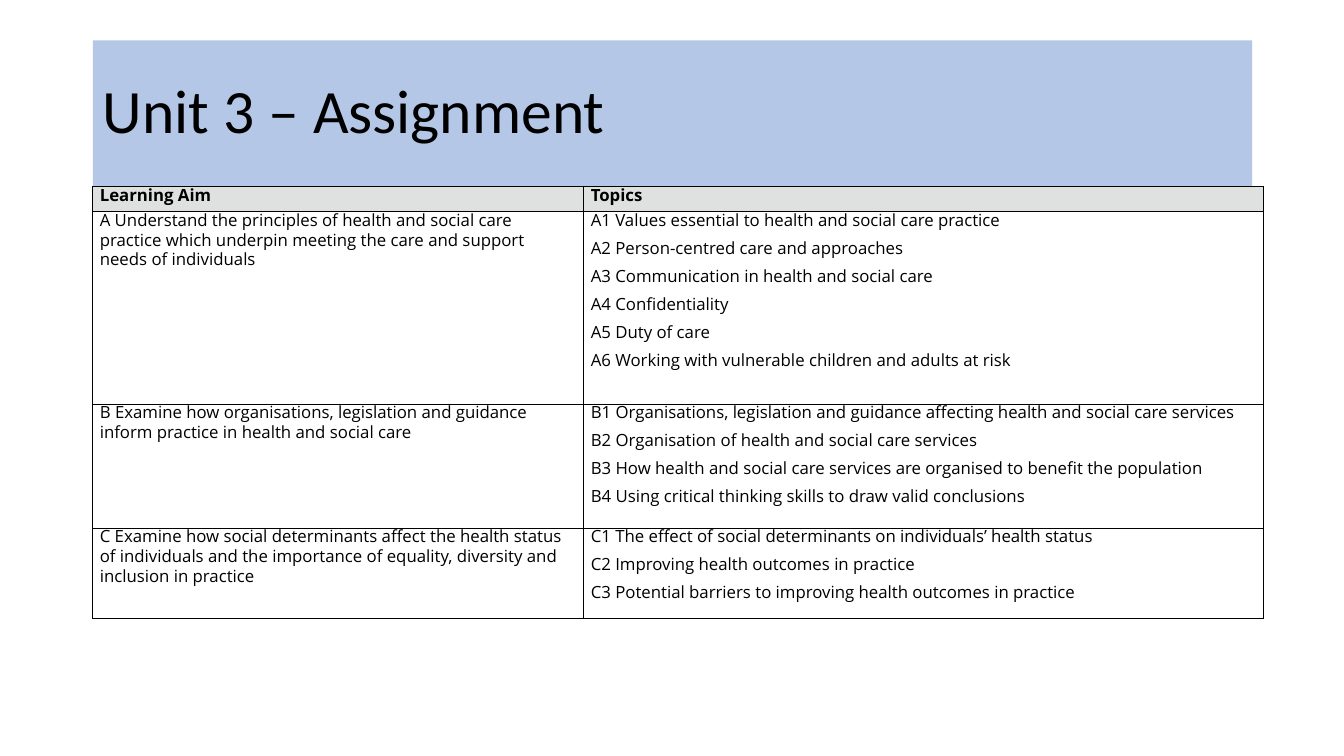
from lxml.etree import SubElement
from pptx import Presentation
from pptx.dml.color import RGBColor
from pptx.enum.text import MSO_ANCHOR, PP_ALIGN
from pptx.oxml.ns import qn
from pptx.util import Inches, Pt

HUES = {"ink": "000000", "band": "B4C7E7", "head": "DFE1E1", "page": "FFFFFF"}
COLS = [4.87, 6.74]
ROWS = [0.25, 1.91, 1.23, 0.9]
AIMS = [
    ("Learning Aim", ["Topics"]),
    ("A Understand the principles of health and social care practice which "
     "underpin meeting the care and support needs of individuals",
     ["A1 Values essential to health and social care practice",
      "A2 Person-centred care and approaches",
      "A3 Communication in health and social care",
      "A4 Confidentiality",
      "A5 Duty of care",
      "A6 Working with vulnerable children and adults at risk"]),
    ("B Examine how organisations, legislation and guidance inform practice "
     "in health and social care",
     ["B1 Organisations, legislation and guidance affecting health and social care services",
      "B2 Organisation of health and social care services",
      "B3 How health and social care services are organised to benefit the population",
      "B4 Using critical thinking skills to draw valid conclusions"]),
    ("C Examine how social determinants affect the health status of individuals "
     "and the importance of equality, diversity and inclusion in practice",
     ["C1 The effect of social determinants on individuals’ health status",
      "C2 Improving health outcomes in practice",
      "C3 Potential barriers to improving health outcomes in practice"]),
]
FILLS = ["head", "page", None, None]


class Deck:
    """Holds the style and the current slide, and adds each kind of element."""

    def __init__(self):
        self.show = Presentation()
        self.show.slide_width = Inches(13.33)
        self.show.slide_height = Inches(7.5)
        self.slide = self.show.slides.add_slide(self.show.slide_layouts[5])

    def paint(self, fill, hue):
        if hue is None:
            fill.background()
        else:
            fill.solid()
            fill.fore_color.rgb = RGBColor.from_string(HUES[hue])

    def run(self, para, text, font, size, bold=False):
        run = para.add_run()
        run.text = text
        run.font.name = font
        run.font.size = Pt(size)
        run.font.bold = bold
        run.font.color.rgb = RGBColor.from_string(HUES["ink"])

    def title(self, text, left, top, width, height):
        box = self.slide.shapes.title
        box.left, box.top = Inches(left), Inches(top)
        box.width, box.height = Inches(width), Inches(height)
        self.paint(box.fill, "band")
        box.text_frame.vertical_anchor = MSO_ANCHOR.MIDDLE
        para = box.text_frame.paragraphs[0]
        para.alignment = PP_ALIGN.LEFT
        para.line_spacing = 0.9
        self.run(para, text, "Calibri", 44)

    def edge(self, cell):
        props = cell._tc.get_or_add_tcPr()
        for side in ("lnL", "lnR", "lnT", "lnB"):
            line = SubElement(props, qn("a:" + side), w=str(Pt(1)))
            fill = SubElement(line, qn("a:solidFill"))
            SubElement(fill, qn("a:srgbClr"), val=HUES["ink"])

    def cell(self, cell, lines, hue, bold):
        cell.margin_left = cell.margin_right = Inches(0.07)
        cell.margin_top = cell.margin_bottom = 0
        self.edge(cell)
        self.paint(cell.fill, hue)
        frame = cell.text_frame
        for num, line in enumerate(lines):
            para = frame.add_paragraph() if num else frame.paragraphs[0]
            para.line_spacing = Pt(14)
            para.space_before = para.space_after = Pt(3)
            self.run(para, line, "Open Sans", 12, bold)

    def table(self, left, top):
        grid = self.slide.shapes.add_table(
            len(ROWS), len(COLS), Inches(left), Inches(top),
            Inches(sum(COLS)), Inches(sum(ROWS))).table
        for col, width in zip(grid.columns, COLS):
            col.width = Inches(width)
        for num, (aim, topics) in enumerate(AIMS):
            grid.rows[num].height = Inches(ROWS[num])
            for col, lines in enumerate(([aim], topics)):
                self.cell(grid.cell(num, col), lines, FILLS[num], num == 0)


def main():
    deck = Deck()
    deck.title("Unit 3 – Assignment", 0.92, 0.4, 11.5, 1.45)
    deck.table(0.92, 1.85)
    deck.show.save("out.pptx")


if __name__ == "__main__":
    main()
